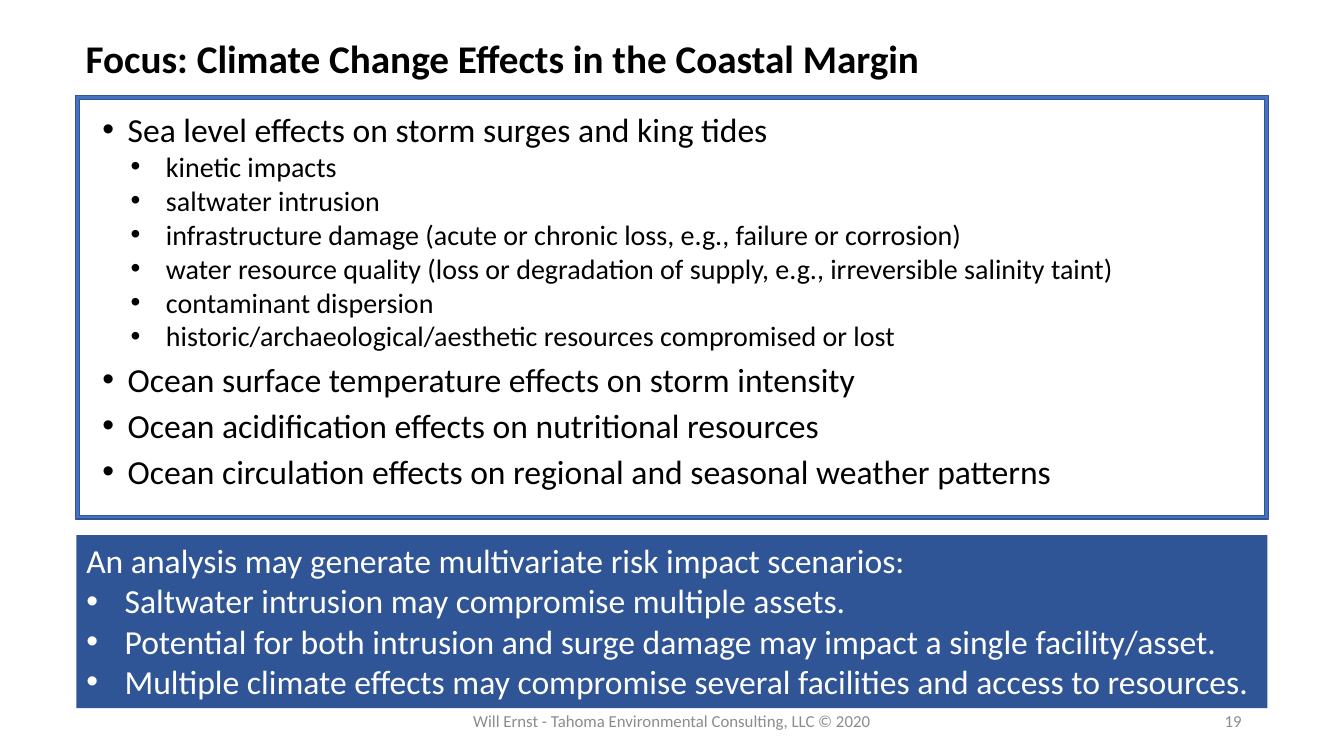
"""Build the slide on climate change effects in the coastal margin."""
from lxml import etree
from pptx import Presentation
from pptx import util as u
from pptx.dml.color import RGBColor
from pptx.enum import shapes, text
from pptx.oxml import ns

THEME = {
    "font": "Calibri",
    "ink": "000000", "paper": "FFFFFF", "muted": "8C8C8C",
    "frame": "4472C4", "edge": "325491", "panel": "2F5597",
    "title": 28, "main": 24, "sub": 20, "small": 12,
}
COLUMNS, ROWS = 160, 90
CELL = u.Inches(7.5) / ROWS


def cells(*counts):
    return [round(count * CELL) for count in counts]


def write(paragraph, words, size, color, bold=False, indent=0, hanging=0, **layout):
    properties = paragraph._p.get_or_add_pPr()
    properties.set("marL", str(u.Inches(indent)))
    properties.set("indent", str(-u.Inches(hanging)))
    if hanging:
        for tag, key, value in (("a:buFont", "typeface", "Arial"), ("a:buChar", "char", "•")):
            etree.SubElement(properties, ns.qn(tag)).set(key, value)
    for name, value in layout.items():
        setattr(paragraph, name, value)
    run = paragraph.add_run()
    run.text = words
    for name, value in {"name": THEME["font"], "size": u.Pt(THEME[size]), "bold": bold}.items():
        setattr(run.font, name, value)
    run.font.color.rgb = RGBColor.from_string(THEME[color])


deck = Presentation()
deck.slide_width, deck.slide_height = cells(COLUMNS, ROWS)
slide = deck.slides.add_slide(deck.slide_layouts[1])

title, effects = slide.placeholders
for holder, place, anchor in (
    (title, (9, 3.7, 138, 7), text.MSO_ANCHOR.MIDDLE),
    (effects, (11, 13.3, 138, 48.5), text.MSO_ANCHOR.TOP),
):
    holder.left, holder.top, holder.width, holder.height = cells(*place)
    holder.text_frame.auto_size = text.MSO_AUTO_SIZE.NONE
    holder.text_frame.vertical_anchor = anchor

write(title.text_frame.paragraphs[0], "Focus: Climate Change Effects in the Coastal Margin",
      "title", "ink", bold=True, alignment=text.PP_ALIGN.LEFT, line_spacing=0.9)

LEVELS = (
    {"size": "main", "indent": 0.25, "hanging": 0.25, "space_before": u.Pt(10)},
    {"size": "sub", "indent": 0.63, "hanging": 0.35, "space_before": u.Pt(5)},
)
for index, (level, words) in enumerate((
    (0, "Sea level effects on storm surges and king tides"),
    (1, "kinetic impacts"),
    (1, "saltwater intrusion"),
    (1, "infrastructure damage (acute or chronic loss, e.g., failure or corrosion)"),
    (1, "water resource quality (loss or degradation of supply, e.g., irreversible salinity taint)"),
    (1, "contaminant dispersion"),
    (1, "historic/archaeological/aesthetic resources compromised or lost"),
    (0, "Ocean surface temperature effects on storm intensity"),
    (0, "Ocean acidification effects on nutritional resources"),
    (0, "Ocean circulation effects on regional and seasonal weather patterns"),
)):
    effect = effects.text_frame
    line = effect.add_paragraph() if index else effect.paragraphs[0]
    layout = LEVELS[level] if index else {**LEVELS[level], "space_before": u.Pt(0)}
    write(line, words, color="ink", level=level, line_spacing=0.8, **layout)

border = slide.shapes.add_shape(shapes.MSO_SHAPE.FRAME, *cells(9, 11.4, 142, 50.4))
border.adjustments[0] = 0.009
border.line.color.rgb = RGBColor.from_string(THEME["edge"])
border.line.width = u.Pt(1)

scenarios = slide.shapes.add_shape(shapes.MSO_SHAPE.RECTANGLE, *cells(9.1, 63.7, 141.8, 20.6))
scenarios.line.fill.background()
for area, color in ((border, "frame"), (scenarios, "panel")):
    area.shadow.inherit = False
    area.fill.solid()
    area.fill.fore_color.rgb = RGBColor.from_string(THEME[color])

scenarios.text_frame.word_wrap = True
scenarios.text_frame.vertical_anchor = text.MSO_ANCHOR.TOP
for index, words in enumerate((
    "An analysis may generate multivariate risk impact scenarios:",
    "Saltwater intrusion may compromise multiple assets.",
    "Potential for both intrusion and surge damage may impact a single facility/asset.",
    "Multiple climate effects may compromise several facilities and access to resources.",
)):
    line = scenarios.text_frame.add_paragraph() if index else scenarios.text_frame.paragraphs[0]
    inset = 0.38 if index else 0
    write(line, words, "main", "paper", indent=inset, hanging=inset,
          alignment=text.PP_ALIGN.LEFT)

for words, column, width, alignment in (
    ("Will Ernst - Tahoma Environmental Consulting, LLC © 2020", 53, 54, text.PP_ALIGN.CENTER),
    ("19", 113, 36, text.PP_ALIGN.RIGHT),
):
    footer = slide.shapes.add_textbox(*cells(column, 83.4, width, 4.8)).text_frame
    footer.word_wrap = True
    footer.vertical_anchor = text.MSO_ANCHOR.MIDDLE
    write(footer.paragraphs[0], words, "small", "muted", alignment=alignment)

deck.save("out.pptx")
